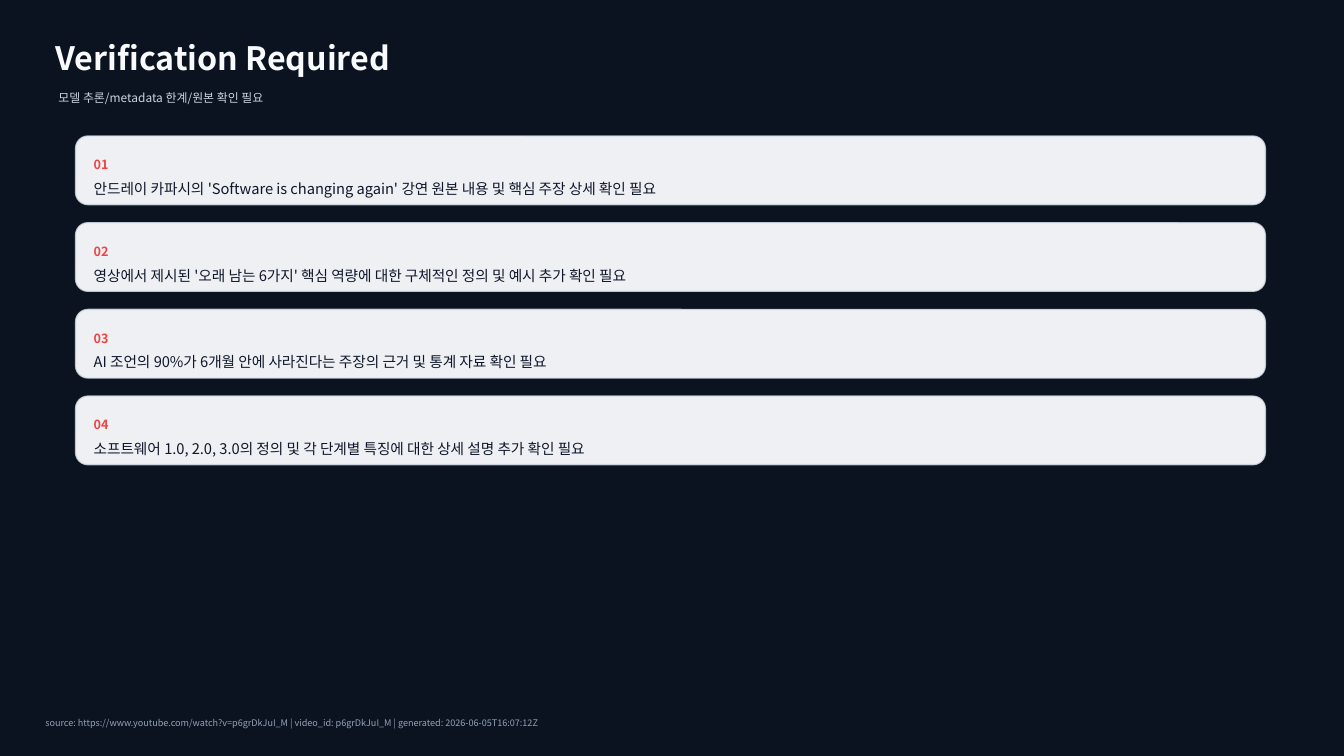
"""Build the Verification Required slide with its numbered check cards."""
import pptx
import pptx.dml.color
import pptx.enum.shapes
import pptx.enum.text
import pptx.oxml.ns
import pptx.util
from lxml import etree
from pptx.util import Inches

RGBColor = pptx.dml.color.RGBColor
NAVY = RGBColor(0x0B, 0x12, 0x20)
WHITE = RGBColor(0xF8, 0xFA, 0xFC)
SILVER = RGBColor(0xCB, 0xD5, 0xE1)
BORDER = RGBColor(0xD7, 0xE0, 0xEA)
RED = RGBColor(0xEF, 0x44, 0x44)
INK = RGBColor(0x0F, 0x17, 0x2A)
SLATE = RGBColor(0x94, 0xA3, 0xB8)
FONT = "Noto Sans CJK KR"
CARD_TOP, CARD_STEP = 1.35, 0.86

CHECKS = [
    "안드레이 카파시의 'Software is changing again' 강연 원본 내용 및 핵심 주장 상세 확인 필요",
    "영상에서 제시된 '오래 남는 6가지' 핵심 역량에 대한 구체적인 정의 및 예시 추가 확인 필요",
    "AI 조언의 90%가 6개월 안에 사라진다는 주장의 근거 및 통계 자료 확인 필요",
    "소프트웨어 1.0, 2.0, 3.0의 정의 및 각 단계별 특징에 대한 상세 설명 추가 확인 필요",
]


def add_label(text, left, top, width, height, size, color, bold=False):
    box = slide.shapes.add_textbox(Inches(left), Inches(top), Inches(width), Inches(height))
    frame = box.text_frame
    frame.word_wrap = True
    frame.vertical_anchor = pptx.enum.text.MSO_ANCHOR.MIDDLE
    frame.margin_left = frame.margin_right = frame.margin_top = frame.margin_bottom = 0
    frame.text = text
    run = frame.paragraphs[0].runs[0]
    run.font.name = FONT
    run.font.size = pptx.util.Pt(size)
    run.font.bold = bold
    run.font.color.rgb = color
    etree.SubElement(run.font._element, pptx.oxml.ns.qn("a:ea"), typeface=FONT)


def set_opacity(fill_parent, percent):
    color = fill_parent.find(pptx.oxml.ns.qn("a:solidFill"))[0]
    etree.SubElement(color, pptx.oxml.ns.qn("a:alpha"), val=str(percent * 1000))


deck = pptx.Presentation()
deck.slide_width, deck.slide_height = Inches(13.33), Inches(7.5)
slide = deck.slides.add_slide(deck.slide_layouts[6])
slide.background.fill.solid()
slide.background.fill.fore_color.rgb = NAVY

add_label("Verification Required", 0.55, 0.35, 12, 0.45, 23, WHITE, bold=True)
add_label("모델 추론/metadata 한계/원본 확인 필요", 0.58, 0.83, 11.5, 0.28, 8.5, SILVER)

for index, check in enumerate(CHECKS):
    top = CARD_TOP + index * CARD_STEP
    card = slide.shapes.add_shape(
        pptx.enum.shapes.MSO_SHAPE.ROUNDED_RECTANGLE,
        Inches(0.75), Inches(top), Inches(11.8), Inches(0.68))
    card.adjustments[0] = 0.18
    card.shadow.inherit = False
    card.fill.solid()
    card.fill.fore_color.rgb = WHITE
    set_opacity(card._element.spPr, 96)
    card.line.color.rgb = BORDER
    card.line.width = pptx.util.Pt(1)
    set_opacity(card.line._ln, 80)
    add_label(f"{index + 1:02d}", 0.93, top + 0.16, 11.44, 0.25, 9, RED, bold=True)
    add_label(check, 0.93, top + 0.5, 11.44, 0.04, 10.5, INK)

add_label("source: https://www.youtube.com/watch?v=p6grDkJuI_M | video_id: p6grDkJuI_M"
          " | generated: 2026-06-05T16:07:12Z", 0.45, 7.05, 12.4, 0.25, 6.5, SLATE)

deck.save("out.pptx")
